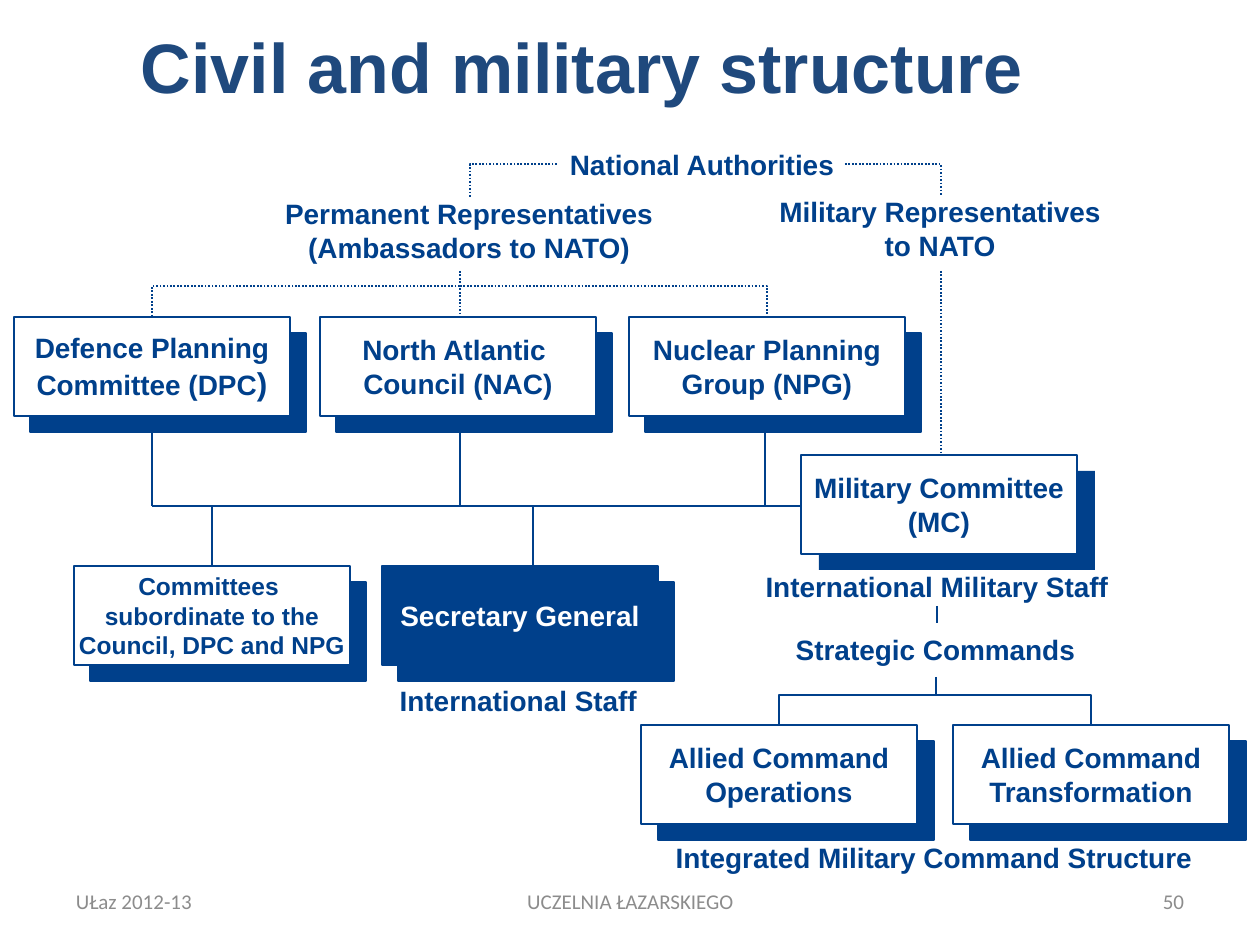
from lxml import etree
from pptx import Presentation
from pptx.dml.color import RGBColor
from pptx.enum.dml import MSO_LINE
from pptx.enum.shapes import MSO_CONNECTOR as Link, MSO_SHAPE as Shape
from pptx.enum.text import MSO_ANCHOR as Anchor, PP_ALIGN as Align
from pptx.oxml.ns import qn
from pptx.util import Emu, Pt

PX_PER_INCH = 126
COLORS = {"navy": "00408B", "title": "1F497D", "footer": "8C8C8C", "white": "FFFFFF"}
BOX_W, BOX_H, SHADOW = 276, 99, 16


def px(length):
    return Emu(round(length * 914400 / PX_PER_INCH))


def rgb(name):
    return RGBColor.from_string(COLORS[name])


def style_run(run, size, color, font="Arial", bold=True):
    run.font.size = Pt(size)
    run.font.name = font
    run.font.bold = bold
    run.font.color.rgb = rgb(color)


def write(shape, text, size=16, color="navy", align=Align.CENTER, inset=0, wrap=False,
          font="Arial", bold=True):
    frame = shape.text_frame
    frame.text = text
    frame.word_wrap = wrap
    frame.vertical_anchor = Anchor.MIDDLE
    frame.margin_left = frame.margin_right = px(inset)
    frame.margin_top = frame.margin_bottom = 0
    for paragraph in frame.paragraphs:
        paragraph.alignment = align
        for run in paragraph.runs:
            style_run(run, size, color, font, bold)


def add_label(slide, left, top, width, height, text, **style):
    label = slide.shapes.add_textbox(px(left), px(top), px(width), px(height))
    write(label, text, **style)


def add_rect(slide, left, top, fill, outlined=True):
    rect = slide.shapes.add_shape(Shape.RECTANGLE, px(left), px(top), px(BOX_W), px(BOX_H))
    rect.shadow.inherit = False
    rect.fill.solid()
    rect.fill.fore_color.rgb = rgb(fill)
    if outlined:
        rect.line.color.rgb = rgb("navy")
        rect.line.width = Pt(0.75)
    else:
        rect.line.fill.background()
    return rect


def add_body(slide, left, top, text, fill="white", color="navy", size=16,
             shadow_dx=SHADOW, shadow_outlined=True):
    """Add a named body as a box with a solid offset box behind it."""
    add_rect(slide, left + shadow_dx, top + SHADOW, "navy", shadow_outlined)
    body = add_rect(slide, left, top, fill)
    write(body, text, size, color)
    return body


def add_link(slide, x1, y1, x2, y2, dotted=False):
    """Join two points; a slanted pair is joined by one corner, horizontal part first."""
    bent = x1 != x2 and y1 != y2
    link = slide.shapes.add_connector(Link.ELBOW if bent else Link.STRAIGHT,
                                      px(x1), px(y1), px(x2), px(y2))
    properties = link._element.spPr
    if bent:
        properties.find(qn("a:prstGeom")).set("prst", "bentConnector2")
    link.line.color.rgb = rgb("navy")
    link.line.width = Pt(1 if dotted else 0.75)
    if dotted:
        link.line.dash_style = MSO_LINE.ROUND_DOT
    etree.SubElement(properties, qn("a:effectLst"))


def add_title(slide, left, top):
    add_label(slide, left, top, 985, 131, "Civil and military structure", size=40,
              color="title", align=Align.LEFT, inset=13, wrap=True)


def add_representatives(slide, left, top):
    add_label(slide, left + 287, top, 286, 34, "National Authorities")
    add_label(slide, left, top + 50, 394, 67,
              "Permanent Representatives\n(Ambassadors to NATO)", wrap=True)
    add_label(slide, left + 471, top + 48, 394, 67,
              "Military Representatives\nto NATO", wrap=True)
    add_link(slide, left + 285, top + 17, left + 198, top + 50, dotted=True)
    add_link(slide, left + 573, top + 17, left + 669, top + 48, dotted=True)
    add_link(slide, left + 669, top + 124, left + 669, top + 308, dotted=True)


def add_councils(slide, left, top):
    center, bus = left + 446, top + 189
    add_link(slide, center, top - 46, center, top, dotted=True)
    for x in (left + 138, left + 753):
        add_link(slide, center, top - 31, x, top, dotted=True)
    for x in (left + 138, center, left + 751):
        add_link(slide, x, top + BOX_H + SHADOW, x, bus)
    add_link(slide, left + 138, bus, left + 787, bus)

    planning = add_body(slide, left, top, "Defence Planning\nCommittee (DPC")
    bracket = planning.text_frame.paragraphs[-1].add_run()
    bracket.text = ")"
    style_run(bracket, 18, "navy")
    add_body(slide, left + 306, top, "North Atlantic \nCouncil (NAC)")
    add_body(slide, left + 615, top, "Nuclear Planning\nGroup (NPG)")


def add_civil_staff(slide, left, top):
    add_link(slide, left + 78, top - 60, left + 138, top)
    add_link(slide, left + 459, top - 60, left + 459, top)
    add_body(slide, left, top, "Committees \nsubordinate to the\nCouncil, DPC and NPG", size=14)
    add_body(slide, left + 308, top, "Secretary General", fill="navy", color="white")
    add_label(slide, left + 313, top + 111, 263, 47, "International Staff")


def add_military_commands(slide, left, top):
    trunk, fork, commands = left + 295, top + 240, top + 270
    add_body(slide, left + 160, top, "Military Committee\n(MC)", shadow_dx=18,
             shadow_outlined=False)
    add_label(slide, left + 111, top + 114, 370, 34, "International Military Staff")
    add_link(slide, trunk + 1, top + 151, trunk + 1, top + 168)
    add_label(slide, left + 142, top + 177, 305, 34, "Strategic Commands")
    add_link(slide, trunk, top + 222, trunk, fork)
    for x, name in ((left, "Operations"), (left + 312, "Transformation")):
        add_link(slide, trunk, fork, x + BOX_W // 2, commands)
        add_body(slide, x, commands, "Allied Command\n" + name, shadow_dx=17)
    add_label(slide, left + 21, top + 379, 544, 47, "Integrated Military Command Structure")


def add_footer(slide, left, top):
    for dx, width, align, text in ((0, 294, Align.LEFT, "UŁaz 2012-13"),
                                   (368, 399, Align.CENTER, "UCZELNIA ŁAZARSKIEGO"),
                                   (840, 294, Align.RIGHT, "50")):
        add_label(slide, left + dx, top, width, 50, text, size=12, color="footer",
                  align=align, inset=13, wrap=True, font="Calibri", bold=False)


def main():
    deck = Presentation()
    deck.slide_width, deck.slide_height = px(1260), px(945)
    slide = deck.slides.add_slide(deck.slide_layouts[6])
    add_title(slide, 128, 0)
    add_representatives(slide, 272, 147)
    add_councils(slide, 14, 317)
    add_civil_staff(slide, 74, 566)
    add_military_commands(slide, 641, 455)
    add_footer(slide, 63, 876)
    deck.save("out.pptx")


if __name__ == "__main__":
    main()
